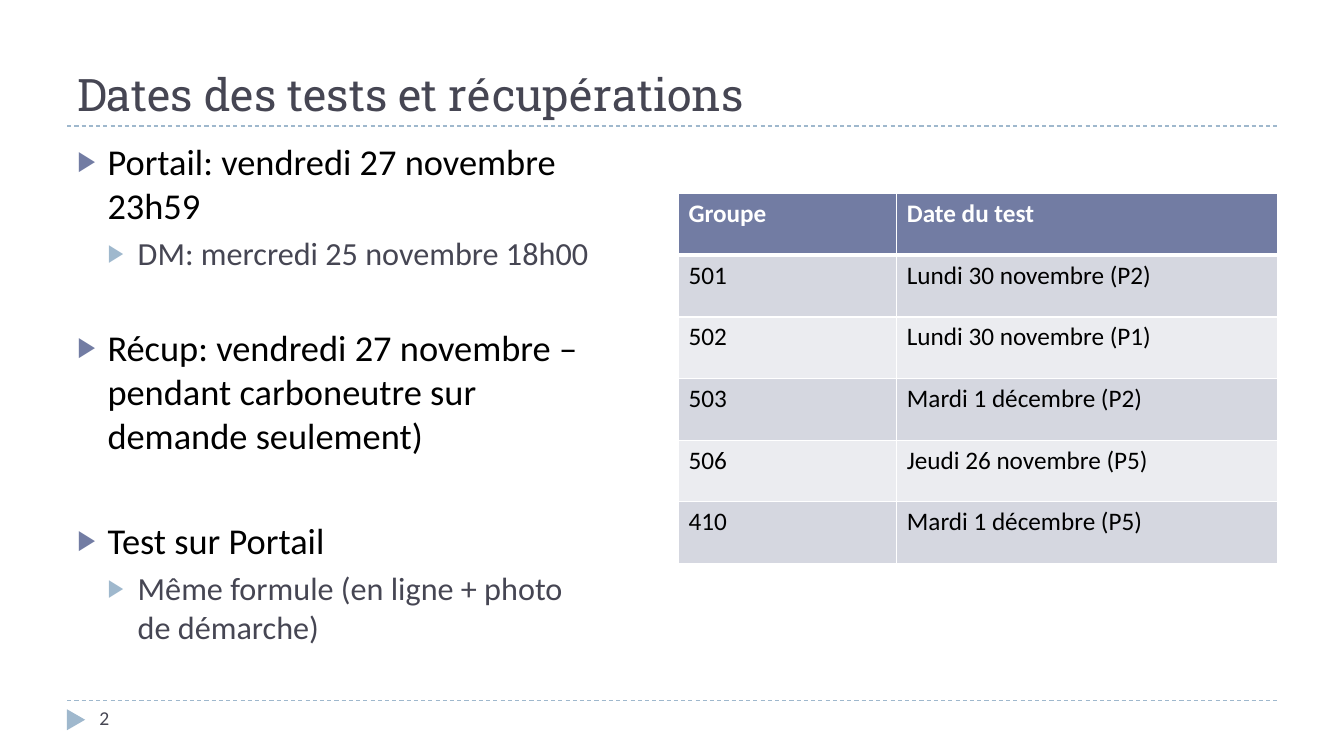
from lxml.etree import SubElement as Sub
from pptx import Presentation
from pptx.dml.color import RGBColor
from pptx.enum.dml import MSO_LINE_DASH_STYLE as Dash
from pptx.enum.shapes import MSO_CONNECTOR as Conn, MSO_SHAPE as Shape
from pptx.enum.text import MSO_ANCHOR as Anchor, MSO_AUTO_SIZE as Auto, PP_ALIGN as Align
from pptx.oxml.ns import qn
from pptx.util import Pt

HEX = {"ink": "464653", "black": "000000", "white": "FFFFFF", "blue": "9FB8CD",
       "head": "727CA3", "dark": "D5D7E0", "light": "EBECF0"}
SANS, SLAB = "Calibri", "Roboto Slab"

# level, space before, text
ITEMS = [
    (0, 6, "Portail: vendredi 27 novembre 23h59"),
    (1, 5, "DM: mercredi 25 novembre 18h00"),
    (0, 38, "Récup: vendredi 27 novembre – pendant carboneutre sur demande seulement)"),
    (0, 44, "Test sur Portail"),
    (1, 5, "Même formule (en ligne + photo de démarche)"),
]
# size, text colour, bullet colour
LEVELS = [(26, "black", "head"), (23, "ink", "blue")]
ROWS = [
    ("Groupe", "Date du test"),
    ("501", "Lundi 30 novembre (P2)"),
    ("502", "Lundi 30 novembre (P1)"),
    ("503", "Mardi 1 décembre (P2)"),
    ("506", "Jeudi 26 novembre (P5)"),
    ("410", "Mardi 1 décembre (P5)"),
]


def rgb(name):
    return RGBColor.from_string(HEX[name])


def style(para, size, color, face=SANS, bold=False):
    for run in para.runs:
        font = run.font
        font.name, font.size, font.bold = face, Pt(size), bold
        font.color.rgb = rgb(color)


def place(shape, left, top, width, height):
    shape.left, shape.top = Pt(left), Pt(top)
    shape.width, shape.height = Pt(width), Pt(height)


def add_rule(slide, top):
    rule = slide.shapes.add_connector(Conn.STRAIGHT, Pt(48), Pt(top), Pt(912), Pt(top))
    rule.line.color.rgb = rgb("blue")
    rule.line.width = Pt(0.75)
    rule.line.dash_style = Dash.DASH
    Sub(rule._element.spPr, qn("a:effectLst"))


def add_mark(slide):
    mark = slide.shapes.add_shape(Shape.ISOSCELES_TRIANGLE,
                                  Pt(46.8), Pt(507.6), Pt(15), Pt(13))
    mark.rotation = 90
    mark.shadow.inherit = False
    mark.fill.solid()
    mark.fill.fore_color.rgb = rgb("blue")
    mark.line.fill.background()


def add_page(slide, text):
    frame = slide.shapes.add_textbox(Pt(64), Pt(500.4), Pt(208), Pt(28.8)).text_frame
    frame.word_wrap = True
    frame.text = text
    style(frame.paragraphs[0], 14, "ink")


def set_title(slide, text):
    title = slide.shapes.title
    place(title, 48, 12, 864, 78)
    frame = title.text_frame
    frame.text = text
    frame.vertical_anchor = Anchor.BOTTOM
    frame.auto_size = Auto.NONE
    frame.paragraphs[0].alignment = Align.LEFT
    style(frame.paragraphs[0], 32, "ink", SLAB)


def set_bullet(para, level, color):
    props = para._p.get_or_add_pPr()
    props.set("marL", str(Pt(21.6 * (level + 1))))
    props.set("indent", str(-Pt(21.6)))
    Sub(Sub(props, qn("a:buClr")), qn("a:srgbClr"), val=HEX[color])
    Sub(props, qn("a:buSzPct"), val="76000")
    Sub(props, qn("a:buFont"), typeface=SANS)
    Sub(props, qn("a:buChar"), char="▶")


def set_list(slide):
    body = slide.placeholders[1]
    place(body, 48, 96, 390, 389)
    frame = body.text_frame
    frame.text = "\n".join(text for _, _, text in ITEMS)
    frame.auto_size = Auto.NONE
    for para, (level, gap, _) in zip(frame.paragraphs, ITEMS):
        size, color, dot = LEVELS[level]
        para.level = level
        para.space_before = Pt(gap)
        set_bullet(para, level, dot)
        style(para, size, color)


def set_edges(cell, row):
    props = cell._tc.get_or_add_tcPr()
    thick = {"T": 3 if row == 1 else 1, "B": 3 if row == 0 else 1}
    for spot, side in enumerate("LRTB"):
        edge = Sub(props, qn("a:ln" + side), w=str(Pt(thick.get(side, 1))))
        Sub(Sub(edge, qn("a:solidFill")), qn("a:srgbClr"), val=HEX["white"])
        props.insert(spot, edge)


def add_dates(slide):
    table = slide.shapes.add_table(len(ROWS), 2, Pt(484.6), Pt(138.4),
                                   Pt(428), Pt(264)).table
    for col, width in zip(table.columns, (156, 272)):
        col.width = Pt(width)
    for r, row in enumerate(ROWS):
        table.rows[r].height = Pt(44)
        band = "head" if r == 0 else ("light", "dark")[r % 2]
        for c, text in enumerate(row):
            cell = table.cell(r, c)
            cell.text_frame.text = text
            cell.fill.solid()
            cell.fill.fore_color.rgb = rgb(band)
            set_edges(cell, r)
            style(cell.text_frame.paragraphs[0], 18,
                  "black" if r else "white", bold=r == 0)


def main():
    deck = Presentation()
    deck.slide_width, deck.slide_height = Pt(960), Pt(540)
    slide = deck.slides.add_slide(deck.slide_layouts[1])

    # Frame of the page
    for top in (500.4, 90):
        add_rule(slide, top)
    add_mark(slide)
    add_page(slide, "2")

    # Content
    set_title(slide, "Dates des tests et récupérations")
    set_list(slide)
    add_dates(slide)
    deck.save("out.pptx")


if __name__ == "__main__":
    main()
